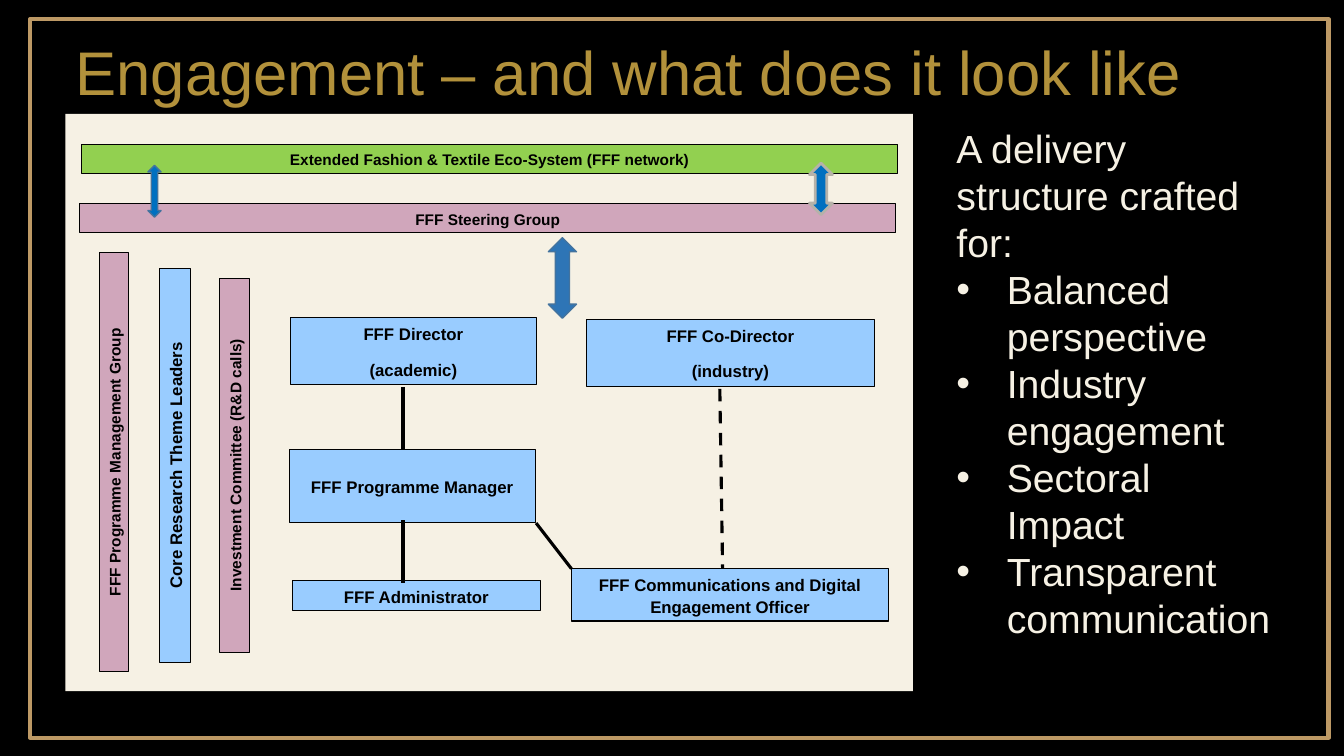
"""Build the engagement slide with its delivery structure chart."""
import dataclasses

import pptx
import pptx.dml.color
import pptx.enum.dml
import pptx.enum.shapes
import pptx.enum.text
import pptx.oxml
import pptx.util
from pptx.util import Cm, Pt

TITLE = "Engagement – and what does it look like"
INTRO = "A delivery structure crafted for:"
AIMS = ["Balanced perspective", "Industry engagement", "Sectoral Impact", "Transparent communication"]


@dataclasses.dataclass(frozen=True)
class Theme:
    font: str = "Arial"
    background: str = "000000"
    frame: str = "BD9965"
    cream: str = "F6F1E4"
    gold: str = "B2913B"
    ink: str = "000000"
    pink: str = "D0A6BB"
    green: str = "92D050"
    sky: str = "99CCFF"
    arrow: str = "0070C0"
    main_arrow: str = "2E75B6"
    arrow_edge: str = "43739E"
    pale_edge: str = "B6B2A9"
    title_size: int = 44
    list_size: int = 28
    box_size: int = 12
    bar_size: int = 11


theme = Theme()

SLIDE_SIZE = (33.87, 19.05)
FRAME = (0.76, 0.48, 32.72, 18.11)
PANEL = (1.65, 2.87, 21.36, 14.55)
TITLE_AREA = (1.65, 0.97, 29.21, 1.91)
LIST_AREA = (23.85, 3, 8.48, 14.63)

BOXES = [
    ("FFF Steering Group", (2.01, 5.13, 20.57, 0.74), theme.pink, theme.bar_size),
    ("Extended Fashion & Textile Eco-System (FFF network)", (2.06, 3.63, 20.57, 0.74), theme.green, theme.bar_size),
    ("FFF Programme Management Group", (2.5, 6.36, 0.74, 10.57), theme.pink, theme.bar_size),
    ("Core Research Theme Leaders", (4.01, 6.76, 0.79, 9.93), theme.sky, theme.box_size),
    ("Investment Committee (R&D calls)", (5.54, 7.01, 0.74, 9.42), theme.pink, theme.bar_size),
    ("FFF Director\n(academic)", (7.32, 8, 6.2, 1.7), theme.sky, theme.box_size),
    ("FFF Co-Director\n(industry)", (14.78, 8.05, 7.26, 1.68), theme.sky, theme.box_size),
    ("FFF Programme Manager", (7.29, 11.33, 6.2, 1.85), theme.sky, theme.box_size),
    ("FFF Administrator", (7.37, 14.63, 6.25, 0.76), theme.sky, theme.box_size),
    ("FFF Communications and Digital Engagement Officer", (14.4, 14.33, 8, 1.32), theme.sky, theme.box_size),
]
ARROWS = [
    ((20.4, 4.11, 0.58, 1.3), theme.arrow, theme.pale_edge, 2),
    ((3.73, 4.17, 0.33, 1.3), theme.arrow, theme.arrow_edge, 1),
    ((13.82, 5.99, 0.71, 2.03), theme.main_arrow, theme.arrow_edge, 1),
]
LINES = [
    ((10.16, 9.75, 10.16, 11.33), 3, False),
    ((10.16, 13.11, 10.16, 14.68), 3, False),
    ((18.14, 9.8, 18.21, 14.33), 2.25, True),
    ((13.51, 13.18, 14.4, 14.33), 2.25, False),
]


def rgb(code):
    return pptx.dml.color.RGBColor.from_string(code)


def lengths(values):
    return [Cm(value) for value in values]


def add_shape(slide, kind, area, fill=None, edge=None, weight=0.75):
    shape = slide.shapes.add_shape(kind, *lengths(area))
    shape.shadow.inherit = False
    for part, colour in ((shape.fill, fill), (shape.line.fill, edge)):
        if colour:
            part.solid()
            part.fore_color.rgb = rgb(colour)
        else:
            part.background()
    if edge:
        shape.line.width = Pt(weight)
    return shape


def format_runs(paragraph, size, colour, bold=False):
    for run in paragraph.runs:
        run.font.name = theme.font
        run.font.size = Pt(size)
        run.font.bold = bold
        run.font.color.rgb = rgb(colour)


def add_box(slide, text, area, fill, size):
    left, top, width, height = area
    upright = height > width
    if upright:
        area = (left + (width - height) / 2, top + (height - width) / 2, height, width)
    shape = add_shape(slide, RECTANGLE, area, fill, theme.ink)
    shape.rotation = 270 if upright else 0
    frame = shape.text_frame
    frame.text = text
    frame.word_wrap = True
    frame.vertical_anchor = pptx.enum.text.MSO_ANCHOR.MIDDLE
    for paragraph in frame.paragraphs:
        paragraph.alignment = pptx.enum.text.PP_ALIGN.CENTER
        paragraph.line_spacing = 1.07
        format_runs(paragraph, size, theme.ink, True)
    for paragraph in frame.paragraphs[:-1]:
        paragraph.space_after = Pt(10)


def add_line(slide, ends, weight, dashed):
    connector = slide.shapes.add_connector(pptx.enum.shapes.MSO_CONNECTOR.STRAIGHT, *lengths(ends))
    connector.line.color.rgb = rgb(theme.ink)
    connector.line.width = Pt(weight)
    if dashed:
        connector.line.dash_style = pptx.enum.dml.MSO_LINE.DASH
    properties = connector.element.spPr
    properties.append(properties.makeelement(pptx.oxml.ns.qn("a:effectLst"), {}))


def place_text(placeholder, area, lines, size, colour, anchor):
    placeholder.left, placeholder.top, placeholder.width, placeholder.height = lengths(area)
    frame = placeholder.text_frame
    frame.text = "\n".join(lines)
    frame.word_wrap = True
    frame.auto_size = pptx.enum.text.MSO_AUTO_SIZE.NONE
    frame.vertical_anchor = anchor
    for paragraph in frame.paragraphs:
        paragraph.alignment = pptx.enum.text.PP_ALIGN.LEFT
        paragraph.space_before = Pt(0)
        format_runs(paragraph, size, colour)
    return frame.paragraphs


def set_bullet(paragraph, bulleted):
    properties = paragraph._p.get_or_add_pPr()
    indent = Cm(1.27) if bulleted else 0
    properties.set("marL", str(indent))
    properties.set("indent", str(-indent))
    name, attributes = ("a:buChar", {"char": "•"}) if bulleted else ("a:buNone", {})
    properties.append(properties.makeelement(pptx.oxml.ns.qn(name), attributes))


RECTANGLE = pptx.enum.shapes.MSO_SHAPE.RECTANGLE


def main():
    presentation = pptx.Presentation()
    presentation.slide_width, presentation.slide_height = lengths(SLIDE_SIZE)
    slide = presentation.slides.add_slide(presentation.slide_layouts[1])
    slide.background.fill.solid()
    slide.background.fill.fore_color.rgb = rgb(theme.background)

    add_shape(slide, RECTANGLE, FRAME, edge=theme.frame, weight=3)
    add_shape(slide, RECTANGLE, PANEL, fill=theme.cream)
    for box in BOXES:
        add_box(slide, *box)
    for arrow in ARROWS:
        add_shape(slide, pptx.enum.shapes.MSO_SHAPE.UP_DOWN_ARROW, *arrow)
    for line in LINES:
        add_line(slide, *line)

    anchors = pptx.enum.text.MSO_ANCHOR
    heading = place_text(slide.shapes.title, TITLE_AREA, [TITLE], theme.title_size, theme.gold, anchors.BOTTOM)
    heading[0].line_spacing = 0.9
    body = slide.placeholders[1]
    paragraphs = place_text(body, LIST_AREA, [INTRO, *AIMS], theme.list_size, theme.cream, anchors.TOP)
    for position, paragraph in enumerate(paragraphs):
        set_bullet(paragraph, position > 0)

    presentation.save("out.pptx")


if __name__ == "__main__":
    main()
